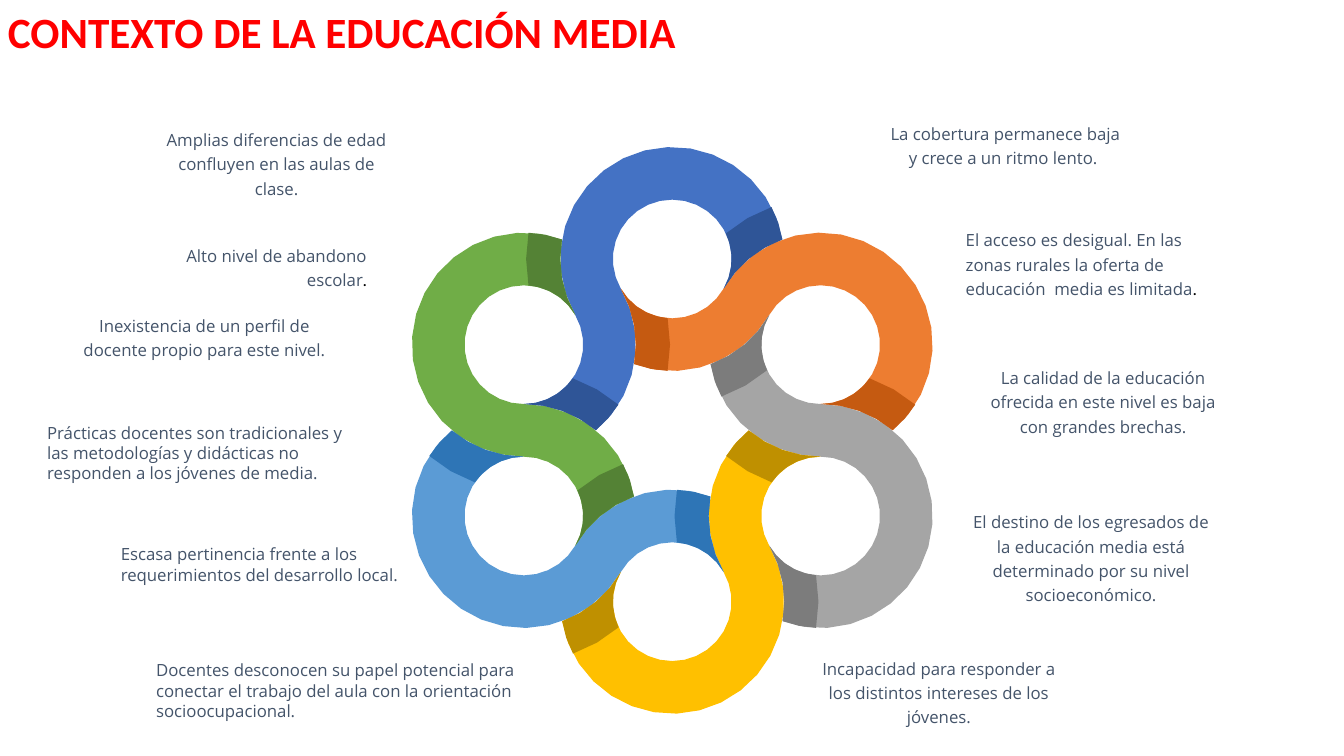
import math
from dataclasses import dataclass

import pptx
import pptx.dml.color
import pptx.enum.text
import pptx.presentation
import pptx.shapes.autoshape
import pptx.slide
import pptx.util

Pt = pptx.util.Pt
RGBColor = pptx.dml.color.RGBColor
Align = pptx.enum.text.PP_ALIGN
Anchor = pptx.enum.text.MSO_ANCHOR
AutoSize = pptx.enum.text.MSO_AUTO_SIZE

RED = RGBColor(0xFF, 0x00, 0x00)
BLACK = RGBColor(0x00, 0x00, 0x00)
SLATE = RGBColor(0x44, 0x54, 0x6A)
BLUE = RGBColor(0x44, 0x72, 0xC4)
DARK_BLUE = RGBColor(0x2F, 0x55, 0x97)
ORANGE = RGBColor(0xED, 0x7D, 0x31)
DARK_ORANGE = RGBColor(0xC5, 0x5A, 0x11)
GRAY = RGBColor(0xA5, 0xA5, 0xA5)
DARK_GRAY = RGBColor(0x7C, 0x7C, 0x7C)
GOLD = RGBColor(0xFF, 0xC0, 0x00)
DARK_GOLD = RGBColor(0xBF, 0x90, 0x00)
SKY = RGBColor(0x5B, 0x9B, 0xD5)
DARK_SKY = RGBColor(0x2E, 0x75, 0xB6)
GREEN = RGBColor(0x70, 0xAD, 0x47)
DARK_GREEN = RGBColor(0x54, 0x82, 0x35)

HUB_X, HUB_Y = 480.2, 307.4
OUTER, HOLE, SHADE = 80, 42.4, 104.4
HUB_RADIUS = OUTER + HOLE
STEP_DEGREES = 12


@dataclass(frozen=True)
class Arc:
    ring: int
    radius: float
    start: float
    end: float


@dataclass(frozen=True)
class Band:
    color: RGBColor
    shade: RGBColor


@dataclass(frozen=True)
class Run:
    text: str
    font: str = "Open Sans"
    color: RGBColor = SLATE
    size: float = 12
    bold: bool = False


@dataclass(frozen=True)
class Label:
    left: float
    top: float
    width: float
    height: float
    runs: tuple[Run, ...]
    alignment: Align = Align.LEFT
    line_spacing: float | pptx.util.Length = 1.0
    space_before: float = 0
    space_after: float = 0
    margins: tuple[float, float] = (7.2, 3.6)
    anchor: Anchor = Anchor.TOP
    auto_size: AutoSize = AutoSize.SHAPE_TO_FIT_TEXT


RIBBON = (
    Arc(-2, OUTER, -50, -90),
    Arc(-1, HOLE, 90, -30),
    Arc(0, OUTER, 150, 350),
    Arc(1, OUTER, 250, 210),
    Arc(0, HOLE, 30, -210),
    Arc(-1, OUTER, -30, 50),
)
HEAD_TIP = (
    Arc(1, OUTER, 250, 210),
    Arc(0, HOLE, 30, -25.5),
    Arc(1, SHADE, 229.6, 250.4),
    Arc(0, OUTER, -27.6, -10),
)
TAIL_TIP = (
    Arc(-1, HOLE, 90, 34.5),
    Arc(-2, SHADE, -70.4, -49.6),
    Arc(-1, OUTER, 32.4, 50),
    Arc(-2, OUTER, -50, -90),
)
BANDS = (
    Band(BLUE, DARK_BLUE),
    Band(ORANGE, DARK_ORANGE),
    Band(GRAY, DARK_GRAY),
    Band(GOLD, DARK_GOLD),
    Band(SKY, DARK_SKY),
    Band(GREEN, DARK_GREEN),
)

TIGHT = {"margins": (3.6, 2.2), "space_before": 2.4}
LOOSE = {"alignment": Align.CENTER, "line_spacing": 1.2}
FIXED = {"line_spacing": Pt(17.5)}
FULL_STOP = Run(".", "Lato", BLACK)

LABELS = (
    Label(-1.4, 8.6, 941.8, 36,
          (Run("CONTEXTO DE LA EDUCACIÓN MEDIA", "Calibri", RED, 30.8, True),),
          line_spacing=0.7, space_after=6, anchor=Anchor.MIDDLE, auto_size=AutoSize.NONE),
    Label(109.4, 87.1, 176.4, 58.3,
          (Run("Amplias diferencias de edad confluyen en las aulas de clase."),),
          Align.CENTER, **FIXED, **TIGHT),
    Label(89.3, 169.9, 176.4, 21.6,
          (Run("Alto nivel de abandono escolar"), FULL_STOP),
          Align.RIGHT, **FIXED, **TIGHT),
    Label(630, 83.5, 176.4, 36.7,
          (Run("La cobertura permanece baja y crece a un ritmo lento. "),), **LOOSE, **TIGHT),
    Label(686.2, 159.1, 176.4, 58.3,
          (Run("El acceso es desigual. En las zonas rurales la oferta de educación  media es limitada"),
           FULL_STOP), **FIXED, **TIGHT),
    Label(691.2, 360.7, 176.4, 72,
          (Run("El destino de los egresados de la educación media está determinado "
               "por su nivel socioeconómico."),), **LOOSE, **TIGHT),
    Label(699.8, 257.8, 176.4, 54.7,
          (Run("La calidad de la educación ofrecida en este nivel es baja con grandes brechas."),),
          **LOOSE, **TIGHT),
    Label(582.5, 465.1, 176.4, 56.2,
          (Run("Incapacidad para responder a los distintos intereses de los jóvenes."),),
          **LOOSE, **TIGHT),
    Label(48.2, 218.9, 195.8, 42.5,
          (Run("Inexistencia de un perfil de docente propio para este nivel."),),
          space_before=2.4, **LOOSE),
    Label(26.6, 298.1, 226.8, 51.1,
          (Run("Prácticas docentes son tradicionales y las metodologías y didácticas "
               "no responden a los jóvenes de media."),)),
    Label(79.2, 385.2, 223.2, 36,
          (Run("Escasa pertinencia frente a los requerimientos del desarrollo local."),)),
    Label(104.4, 468, 295.9, 51.1,
          (Run("Docentes desconocen su papel potencial para conectar el trabajo del aula "
               "con la orientación socioocupacional."),)),
)


def apply_format(target: object, values: dict[str, object]) -> None:
    for name, value in values.items():
        setattr(target, name, value)


def polar(x: float, y: float, radius: float, degrees: float) -> tuple[float, float]:
    angle = math.radians(degrees)
    return x + radius * math.cos(angle), y + radius * math.sin(angle)


def arc_points(arc: Arc, turn: int) -> list[tuple[int, int]]:
    center = polar(HUB_X, HUB_Y, HUB_RADIUS, 60 * (arc.ring + turn) - 90)
    sweep = arc.end - arc.start
    steps = math.ceil(abs(sweep) / STEP_DEGREES)
    points = [polar(*center, arc.radius, arc.start + sweep * step / steps + 60 * turn)
              for step in range(steps)]
    return [(Pt(x), Pt(y)) for x, y in points]


def draw_outline(slide: pptx.slide.Slide, arcs: tuple[Arc, ...], turn: int, color: RGBColor) -> None:
    points = [point for arc in arcs for point in arc_points(arc, turn)]
    builder = slide.shapes.build_freeform(*points[0])
    builder.add_line_segments(points[1:], close=True)
    shape = builder.convert_to_shape()
    shape.shadow.inherit = False
    shape.fill.solid()
    shape.fill.fore_color.rgb = color
    shape.line.fill.background()


def draw_label(slide: pptx.slide.Slide, label: Label) -> None:
    box = (label.left, label.top, label.width, label.height)
    shape = slide.shapes.add_textbox(*map(Pt, box))
    side, edge = map(Pt, label.margins)
    apply_format(shape.text_frame, {
        "word_wrap": True, "auto_size": label.auto_size, "vertical_anchor": label.anchor,
        "margin_left": side, "margin_right": side, "margin_top": edge, "margin_bottom": edge,
    })
    paragraph = shape.text_frame.paragraphs[0]
    apply_format(paragraph, {
        "alignment": label.alignment, "line_spacing": label.line_spacing,
        "space_before": Pt(label.space_before), "space_after": Pt(label.space_after),
    })
    for part in label.runs:
        run = paragraph.add_run()
        run.text = part.text
        apply_format(run.font, {"name": part.font, "size": Pt(part.size), "bold": part.bold})
        run.font.color.rgb = part.color


def main() -> None:
    presentation = pptx.Presentation()
    apply_format(presentation, {"slide_width": Pt(960), "slide_height": Pt(540)})
    slide = presentation.slides.add_slide(presentation.slide_layouts[6])
    for turn, band in enumerate(BANDS):
        draw_outline(slide, RIBBON, turn, band.color)
    for turn, band in enumerate(BANDS):
        for tip in (HEAD_TIP, TAIL_TIP):
            draw_outline(slide, tip, turn, band.shade)
    for label in LABELS:
        draw_label(slide, label)
    presentation.save("out.pptx")


if __name__ == "__main__":
    main()
